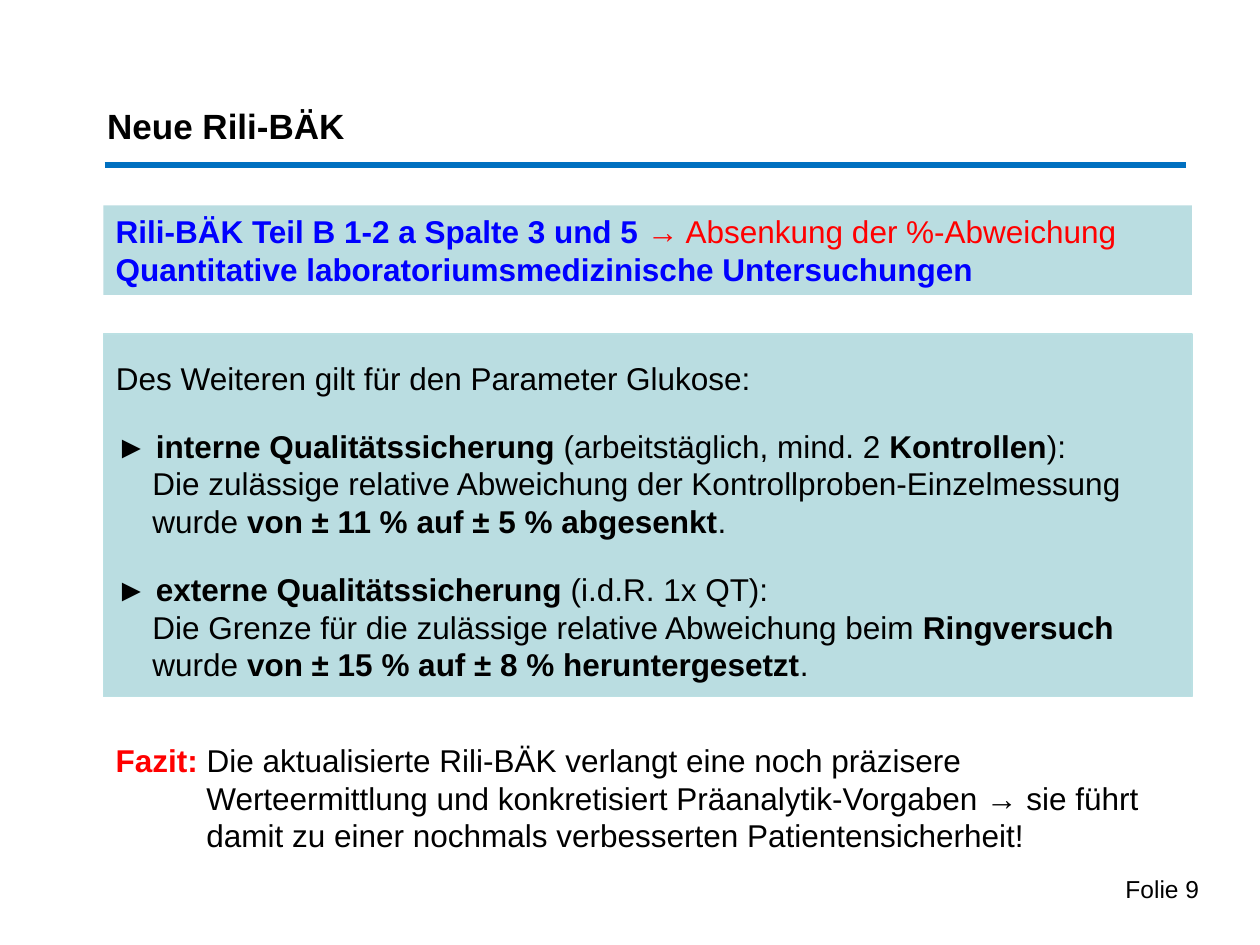
from dataclasses import dataclass

from pptx import Presentation
from pptx.dml.color import RGBColor
from pptx.enum.shapes import MSO_CONNECTOR, MSO_SHAPE
from pptx.enum.text import MSO_ANCHOR, MSO_AUTO_SIZE, PP_ALIGN
from pptx.oxml.ns import qn
from pptx.util import Inches, Pt


@dataclass(frozen=True)
class Theme:
    font: str = "Arial"
    text: str = "000000"
    heading: str = "0000FF"
    accent: str = "FF0000"
    rule: str = "0070C0"
    panel: str = "BADDE1"
    panel_edge: str = "BBE0E3"
    title_size: int = 20
    body_size: int = 18
    footer_size: int = 14


THEME = Theme()
COLUMNS = 100
LEFT, WIDTH = 8.2, 86.4
LIST_INDENT, CONCLUSION_INDENT = 2.9, 7.2


def add_run(paragraph, text, size=THEME.body_size, color=THEME.text, bold=False):
    run = paragraph.add_run()
    run.text = text
    font = run.font
    font.name, font.size, font.bold = THEME.font, Pt(size), bold
    font.color.rgb = RGBColor.from_string(color)


class SlideBuilder:
    """Places elements on square grid cells, COLUMNS of them across the slide."""

    def __init__(self, presentation, theme):
        self.theme = theme
        self.cell = presentation.slide_width / COLUMNS
        self.slide = presentation.slides.add_slide(presentation.slide_layouts[1])

    def lengths(self, *cells):
        return [round(cell * self.cell) for cell in cells]

    def place(self, shape, *box):
        shape.left, shape.top, shape.width, shape.height = self.lengths(*box)

    def style_frame(self, shape, anchor=MSO_ANCHOR.TOP):
        frame = shape.text_frame
        frame.word_wrap = True
        frame.auto_size = MSO_AUTO_SIZE.NONE
        frame.vertical_anchor = anchor
        return frame

    def add_paragraph(self, frame, runs, first=True, align=PP_ALIGN.LEFT, before=0,
                      spacing=1.0, margin=0, indent=0, **run_format):
        """Add one paragraph; runs are (text, format) pairs, margins are in cells."""
        paragraph = frame.paragraphs[0] if first else frame.add_paragraph()
        properties = paragraph._p.get_or_add_pPr()
        margin, indent = self.lengths(margin, indent)
        properties.set("marL", str(margin))
        properties.set("indent", str(indent))
        properties.append(properties.makeelement(qn("a:buNone"), {}))
        paragraph.alignment = align
        paragraph.space_before = Pt(before)
        paragraph.line_spacing = spacing
        for text, changes in runs:
            add_run(paragraph, text, **{**run_format, **changes})

    def fill_panel(self, shape, edge=None):
        shape.fill.solid()
        shape.fill.fore_color.rgb = RGBColor.from_string(self.theme.panel)
        if edge:
            shape.line.color.rgb = RGBColor.from_string(edge)
            shape.line.width = Pt(0.75)
        else:
            shape.line.fill.background()

    def title(self, text, *box):
        shape = self.slide.shapes.title
        self.place(shape, *box)
        frame = self.style_frame(shape, MSO_ANCHOR.MIDDLE)
        self.add_paragraph(frame, [(text, {})], size=self.theme.title_size, bold=True)

    def rule(self, left, top, right):
        x1, y, x2 = self.lengths(left, top, right)
        line = self.slide.shapes.add_connector(MSO_CONNECTOR.STRAIGHT, x1, y, x2, y)
        line.line.color.rgb = RGBColor.from_string(self.theme.rule)
        line.line.width = Pt(3.25)
        properties = line._element.spPr
        properties.append(properties.makeelement(qn("a:effectLst"), {}))

    def panel(self, runs, *box):
        shape = self.slide.shapes.add_shape(MSO_SHAPE.RECTANGLE, *self.lengths(*box))
        shape.shadow.inherit = False
        self.fill_panel(shape)
        self.add_paragraph(self.style_frame(shape, MSO_ANCHOR.MIDDLE), runs)

    def body(self, paragraphs, *box):
        shape = self.slide.placeholders[1]
        self.place(shape, *box)
        self.fill_panel(shape, self.theme.panel_edge)
        frame = self.style_frame(shape)
        for number, (runs, layout) in enumerate(paragraphs):
            self.add_paragraph(frame, runs, first=number == 0, **layout)

    def text(self, runs, *box, **layout):
        shape = self.slide.shapes.add_textbox(*self.lengths(*box))
        self.add_paragraph(self.style_frame(shape), runs, **layout)


def main():
    presentation = Presentation()
    presentation.slide_width, presentation.slide_height = Inches(10), Inches(7.5)
    builder = SlideBuilder(presentation, THEME)
    bold = {"bold": True}
    heading = {"color": THEME.heading, "bold": True}
    accent = {"color": THEME.accent}
    item = {"margin": LIST_INDENT, "indent": -LIST_INDENT, "before": 17}
    detail = {"margin": LIST_INDENT}

    builder.rule(8.3, 13.1, 94.1)
    builder.title("Neue Rili-BÄK", 7.5, 7.6, 43.3, 4.7)
    builder.panel([
        ("Rili-BÄK Teil B 1-2 a Spalte 3 und 5 ", heading),
        ("→ Absenkung der %-Abweichung ", accent),
        ("Quantitative laboratoriumsmedizinische Untersuchungen", heading),
    ], LEFT, 16.3, WIDTH, 7.1)
    builder.body([
        ([("Des Weiteren gilt für den Parameter Glukose:", {})], {"spacing": 1.5}),
        ([("► ", {}), ("interne Qualitätssicherung ", bold),
          ("(arbeitstäglich, mind. 2 ", {}), ("Kontrollen", bold), ("):", {})], item),
        ([("Die zulässige relative Abweichung der Kontrollproben-Einzelmessung wurde ", {}),
          ("von ± 11 % auf ± 5 % abgesenkt", bold), (".", {})], detail),
        ([("► externe Qualitätssicherung ", bold), ("(i.d.R. 1x QT):", {})], item),
        ([("Die Grenze für die zulässige relative Abweichung beim ", {}),
          ("Ringversuch", bold), (" wurde ", {}),
          ("von ± 15 % auf ± 8 % heruntergesetzt", bold), (".", {})], detail),
    ], LEFT, 26.5, WIDTH, 28.8)
    builder.text([
        ("Fazit: ", {**accent, **bold}),
        ("Die aktualisierte Rili-BÄK verlangt eine noch präzisere Werteermittlung und "
         "konkretisiert Präanalytik-Vorgaben → sie führt damit zu einer nochmals "
         "verbesserten Patientensicherheit!", {}),
    ], LEFT, 58.3, WIDTH, 10.1, margin=CONCLUSION_INDENT, indent=-CONCLUSION_INDENT)
    builder.text([("Folie 9", {})], 87.8, 68.9, 8.9, 3.9,
                 align=PP_ALIGN.CENTER, size=THEME.footer_size)
    presentation.save("out.pptx")


if __name__ == "__main__":
    main()
